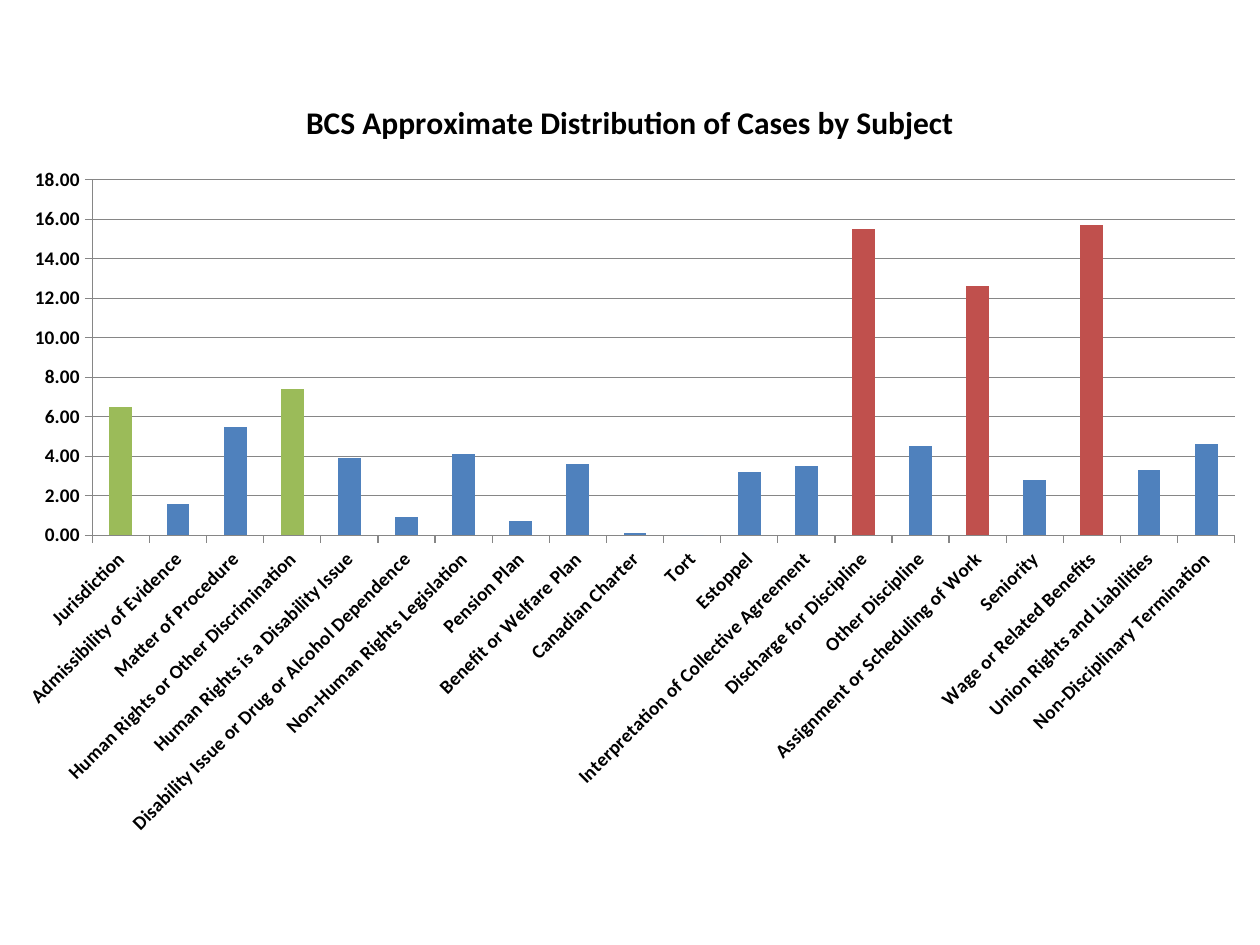
from dataclasses import dataclass

from pptx import Presentation
from pptx.chart.data import CategoryChartData
from pptx.dml.color import RGBColor as RGB
from pptx.enum.chart import XL_CHART_TYPE as Chart, XL_TICK_MARK as Tick
from pptx.oxml.ns import qn
from pptx.util import Inches, Pt


@dataclass(frozen=True)
class Theme:
    font: str = "Calibri"
    text: RGB = RGB(0x00, 0x00, 0x00)
    line: RGB = RGB(0x86, 0x86, 0x86)
    bar: RGB = RGB(0x4F, 0x81, 0xBD)
    medium: RGB = RGB(0x9B, 0xBB, 0x59)
    high: RGB = RGB(0xC0, 0x50, 0x4D)
    base_size: int = 10
    axis_size: int = 11
    title_size: int = 18


THEME = Theme()
TITLE = "BCS Approximate Distribution of Cases by Subject"
CASES = {
    "Jurisdiction": 6.5,
    "Admissibility of Evidence": 1.6,
    "Matter of Procedure": 5.5,
    "Human Rights or Other Discrimination": 7.4,
    "Human Rights is a Disability Issue": 3.9,
    "Disability Issue or Drug or Alcohol Dependence": 0.9,
    "Non-Human Rights Legislation": 4.1,
    "Pension Plan": 0.7,
    "Benefit or Welfare Plan": 3.6,
    "Canadian Charter": 0.1,
    "Tort": 0,
    "Estoppel": 3.2,
    "Interpretation of Collective Agreement": 3.5,
    "Discharge for Discipline": 15.5,
    "Other Discipline": 4.5,
    "Assignment or Scheduling of Work": 12.6,
    "Seniority": 2.8,
    "Wage or Related Benefits": 15.7,
    "Union Rights and Liabilities": 3.3,
    "Non-Disciplinary Termination": 4.6,
}
HIGHLIGHTS = ((10, THEME.high), (6, THEME.medium))


def set_attrs(obj, values):
    for name, value in values.items():
        setattr(obj, name, value)


def style_font(font, size, bold):
    set_attrs(font, {"name": THEME.font, "size": Pt(size), "bold": bold})
    font.color.rgb = THEME.text


def style_line(line):
    line.color.rgb = THEME.line
    line.width = Pt(0.75)


def add_case_chart(slide):
    data = CategoryChartData(number_format="0.00")
    data.categories = list(CASES)
    data.add_series("Series 1", list(CASES.values()))
    frame = slide.shapes.add_chart(
        Chart.COLUMN_CLUSTERED, Inches(0), Inches(0.58), Inches(10), Inches(6.17), data)
    chart = frame.chart
    chart.has_legend = False
    style_font(chart.font, THEME.base_size, False)
    return chart


def style_title(chart):
    chart.has_title = True
    tf = chart.chart_title.text_frame
    tf.text = TITLE
    style_font(tf.paragraphs[0].runs[0].font, THEME.title_size, True)
    chart.chart_title.include_in_layout = False


def style_axis(axis):
    set_attrs(axis, {"major_tick_mark": Tick.OUTSIDE, "minor_tick_mark": Tick.NONE})
    style_font(axis.tick_labels.font, THEME.axis_size, True)
    style_line(axis.format.line)


def style_axes(chart):
    subjects, values = chart.category_axis, chart.value_axis
    for axis in (subjects, values):
        style_axis(axis)
    subjects.has_major_gridlines = False
    body = subjects._element.find(qn("c:txPr")).find(qn("a:bodyPr"))
    body.set("rot", str(-45 * 60000))
    body.set("vert", "horz")
    set_attrs(values, {"minimum_scale": 0, "maximum_scale": 18, "major_unit": 2,
                       "has_major_gridlines": True})
    set_attrs(values.tick_labels, {"number_format": "0.00", "number_format_is_linked": False})
    style_line(values.major_gridlines.format.line)


def color_bars(chart):
    plot = chart.plots[0]
    set_attrs(plot, {"gap_width": 150, "vary_by_categories": False})
    series = plot.series[0]
    series.format.fill.solid()
    series.format.fill.fore_color.rgb = THEME.bar
    for i, value in enumerate(CASES.values()):
        color = next((c for limit, c in HIGHLIGHTS if value > limit), None)
        if color is not None:
            fill = series.points[i].format.fill
            fill.solid()
            fill.fore_color.rgb = color


def main():
    prs = Presentation()
    set_attrs(prs, {"slide_width": Inches(10), "slide_height": Inches(7.5)})
    slide = prs.slides.add_slide(prs.slide_layouts[6])
    chart = add_case_chart(slide)
    style_title(chart)
    style_axes(chart)
    color_bars(chart)
    prs.save("out.pptx")


if __name__ == "__main__":
    main()
